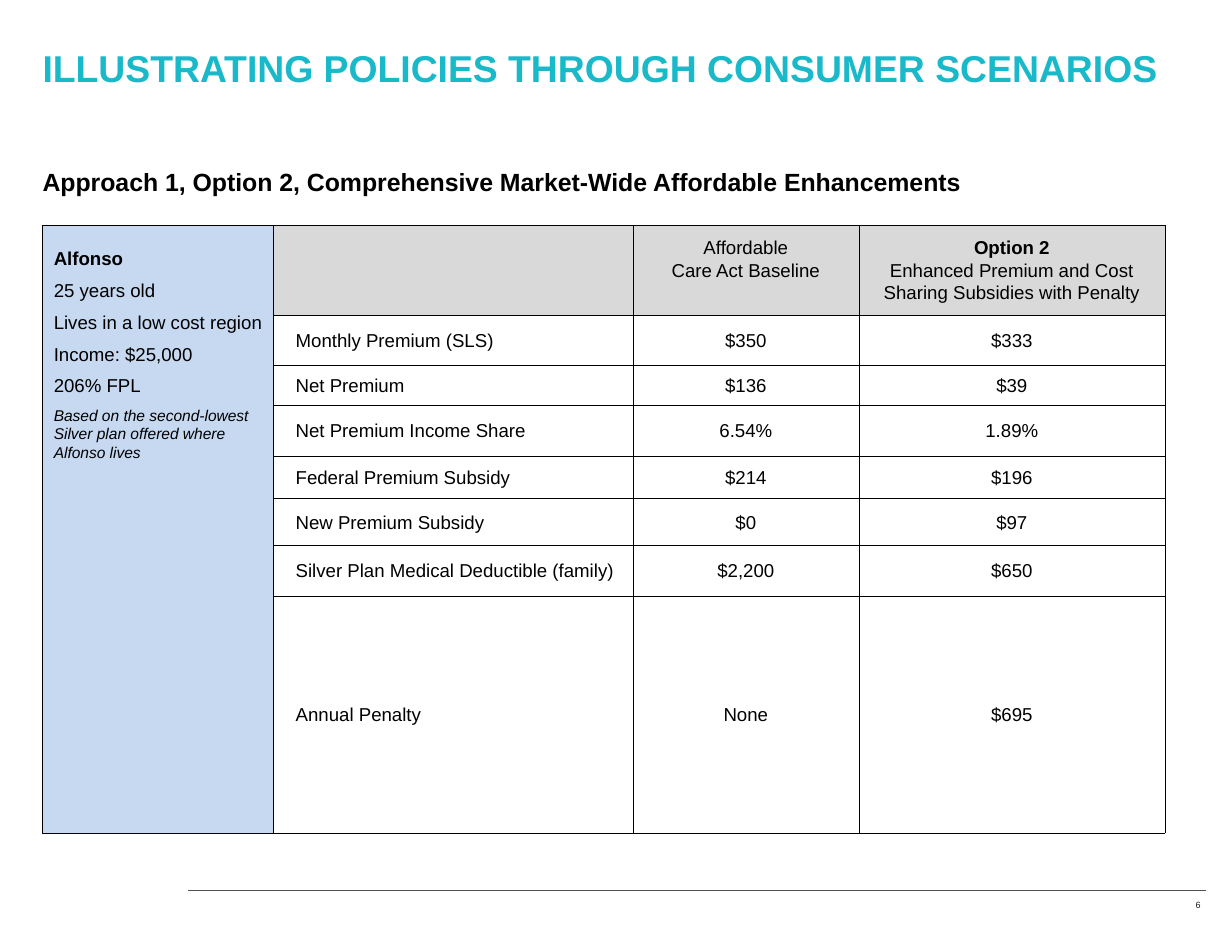
import copy

import pptx
import pptx.dml.color
import pptx.enum.shapes
import pptx.enum.text
import pptx.oxml
import pptx.oxml.ns
import pptx.util

Inches, Pt = pptx.util.Inches, pptx.util.Pt
ALIGN, ANCHOR = pptx.enum.text.PP_ALIGN, pptx.enum.text.MSO_ANCHOR

TITLE = "ILLUSTRATING POLICIES THROUGH CONSUMER SCENARIOS"
SUBTITLE = "Approach 1, Option 2, Comprehensive Market-Wide Affordable Enhancements"
PAGE = "6"
PROFILE = [
    "Alfonso",
    "25 years old",
    "Lives in a low cost region",
    "Income: $25,000",
    "206% FPL",
    "Based on the second-lowest\nSilver plan offered where Alfonso lives",
]
HEADERS = [
    "Affordable\nCare Act Baseline",
    "Option 2\nEnhanced Premium and Cost Sharing Subsidies with Penalty",
]
ROWS = [
    ("Monthly Premium (SLS)", "$350", "$333"),
    ("Net Premium", "$136", "$39"),
    ("Net Premium Income Share", "6.54%", "1.89%"),
    ("Federal Premium Subsidy", "$214", "$196"),
    ("New Premium Subsidy", "$0", "$97"),
    ("Silver Plan Medical Deductible (family)", "$2,200", "$650"),
    ("Annual Penalty", "None", "$695"),
]
COL_WIDTHS = [2.06, 3.21, 2.02, 2.73]
ROW_HEIGHTS = [0.8, 0.45, 0.36, 0.45, 0.38, 0.42, 0.45, 2.12]
LEFT = 0.38


def color(value):
    return pptx.dml.color.RGBColor.from_string(value)


def style(p, size, fill="000000", bold=False, italic=False):
    for r in p.runs:
        r.font.name = "Arial"
        r.font.size = Pt(size)
        r.font.bold = bold
        r.font.italic = italic
        r.font.color.rgb = color(fill)
    for br in p._p.findall(pptx.oxml.ns.qn("a:br")):
        br.append(copy.deepcopy(p.runs[0]._r.rPr))


def set_box(sp, box, text, margins, size, fill, bold, align=ALIGN.LEFT, anchor=ANCHOR.TOP):
    sp.left, sp.top, sp.width, sp.height = map(Inches, box)
    tf = sp.text_frame
    tf.word_wrap = True
    tf.auto_size = pptx.enum.text.MSO_AUTO_SIZE.NONE
    tf.vertical_anchor = anchor
    tf.margin_left, tf.margin_top, tf.margin_right, tf.margin_bottom = map(Inches, margins)
    tf.text = text
    p = tf.paragraphs[0]
    p.alignment = align
    style(p, size, fill, bold)


def set_cell(cell, texts, margins, align=ALIGN.LEFT, anchor=ANCHOR.MIDDLE, after=0):
    cell.margin_left, cell.margin_top, cell.margin_right, cell.margin_bottom = map(Inches, margins)
    cell.vertical_anchor = anchor
    tf = cell.text_frame
    for i, text in enumerate(texts):
        p = tf.paragraphs[0] if i == 0 else tf.add_paragraph()
        p.text = text
        p.alignment = align
        p.line_spacing = 1.07
        p.space_after = Pt(after)
        style(p, 12)


def add_borders(cell):
    tcPr = cell._tc.get_or_add_tcPr()
    for side in ("lnL", "lnR", "lnT", "lnB"):
        tcPr.append(pptx.oxml.parse_xml(
            f'<a:{side} {pptx.oxml.ns.nsdecls("a")} w="3175"><a:solidFill>'
            f'<a:srgbClr val="000000"/></a:solidFill></a:{side}>'))


def add_scenario_table(s):
    frame = s.shapes.add_table(len(ROW_HEIGHTS), len(COL_WIDTHS), Inches(LEFT), Inches(2.01),
                               Inches(sum(COL_WIDTHS)), Inches(sum(ROW_HEIGHTS)))
    table = frame.table
    table.first_row = table.horz_banding = False
    for column, width in zip(table.columns, COL_WIDTHS):
        column.width = Inches(width)
    for row, height in zip(table.rows, ROW_HEIGHTS):
        row.height = Inches(height)

    for i in range(len(ROW_HEIGHTS)):
        for j in range(len(COL_WIDTHS)):
            cell = table.cell(i, j)
            add_borders(cell)
            if i and j:
                cell.fill.background()
            else:
                cell.fill.solid()
                cell.fill.fore_color.rgb = color("D9D9D9" if j else "C6D9F1")

    profile = table.cell(0, 0)
    profile.merge(table.cell(len(ROW_HEIGHTS) - 1, 0))
    set_cell(profile, PROFILE, (0.1, 0.2, 0.07, 0), anchor=ANCHOR.TOP, after=6)
    name, *_, note = profile.text_frame.paragraphs
    name.runs[0].font.bold = True
    for r in note.runs:
        r.font.size = Pt(10)
        r.font.italic = True

    for j, header in enumerate(HEADERS, 2):
        set_cell(table.cell(0, j), [header], (0.07, 0.1, 0.07, 0.1), ALIGN.CENTER, ANCHOR.TOP)
    table.cell(0, 3).text_frame.paragraphs[0].runs[0].font.bold = True

    for i, (label, *values) in enumerate(ROWS, 1):
        set_cell(table.cell(i, 1), [label], (0.2, 0, 0.07, 0))
        for j, value in enumerate(values, 2):
            set_cell(table.cell(i, j), [value], (0.07, 0, 0.07, 0), ALIGN.CENTER)


def add_footer(s):
    line = s.shapes.add_connector(pptx.enum.shapes.MSO_CONNECTOR.STRAIGHT,
                                  Inches(1.68), Inches(7.95), Inches(10.77), Inches(7.95))
    line.line.color.rgb = color("554D56")
    line.line.width = Pt(1)
    line._element.spPr.append(pptx.oxml.parse_xml(f'<a:effectLst {pptx.oxml.ns.nsdecls("a")}/>'))
    set_box(s.shapes.add_textbox(0, 0, 0, 0), (9.84, 7.85, 0.88, 0.45), PAGE, (0, 0, 0, 0),
            5.8, "231F20", False, ALIGN.RIGHT, ANCHOR.MIDDLE)


def main():
    prs = pptx.Presentation()
    prs.slide_width, prs.slide_height = Inches(11), Inches(8.5)
    s = prs.slides.add_slide(prs.slide_layouts[5])
    set_box(s.shapes.title, (LEFT, 0.4, 10.26, 0.86), TITLE, (0, 0, 0, 0), 24, "19B9CA", True)
    add_footer(s)
    add_scenario_table(s)
    set_box(s.shapes.add_textbox(0, 0, 0, 0), (LEFT, 1.44, 9.46, 0.37), SUBTITLE,
            (0, 0.05, 0.1, 0.05), 16, "000000", True)
    prs.save("out.pptx")


if __name__ == "__main__":
    main()
